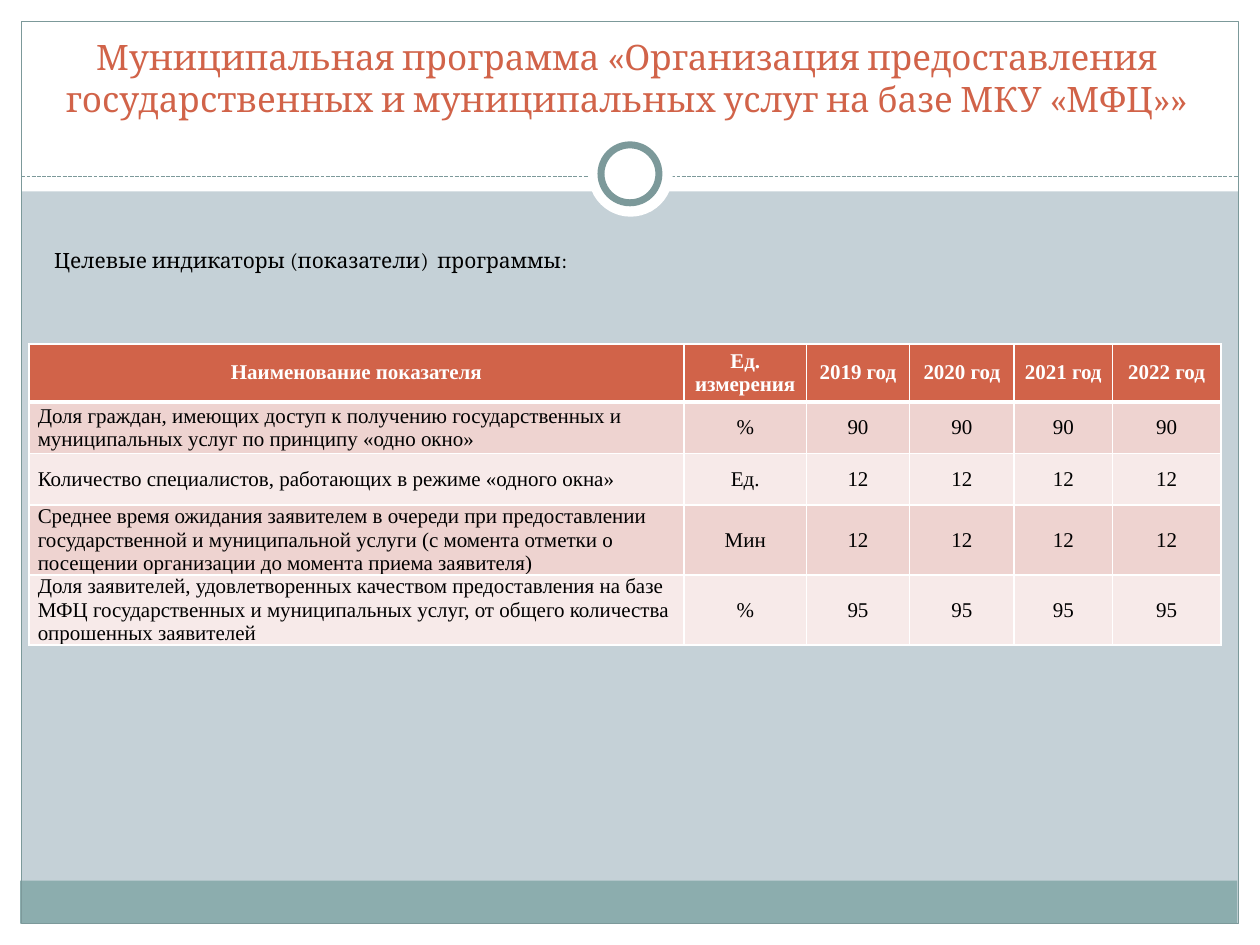
from lxml.etree import SubElement
from pptx import Presentation
from pptx.dml.color import RGBColor
from pptx.enum.dml import MSO_LINE
from pptx.enum.shapes import MSO_CONNECTOR, MSO_SHAPE
from pptx.enum.text import MSO_ANCHOR, MSO_AUTO_SIZE, PP_ALIGN
from pptx.oxml.ns import qn
from pptx.util import Inches, Pt

COLORS = {
    "background": "C5D1D7", "white": "FFFFFF", "black": "000000", "accent": "D16349",
    "footer": "8CADAE", "frame": "7C999A", "odd_row": "EED3D0", "even_row": "F7EAE9",
}
TITLE = ("Муниципальная программа «Организация предоставления государственных "
         "и муниципальных услуг на базе МКУ «МФЦ»»")
SUBTITLE = "Целевые индикаторы (показатели)  программы:"
HEADERS = ["Наименование показателя", "Ед. измерения"] + [f"{year} год" for year in range(2019, 2023)]
INDICATORS = [
    ("Доля граждан, имеющих доступ к получению государственных и муниципальных услуг "
     "по принципу «одно окно»", "%", [90, 90, 90, 90]),
    ("Количество специалистов, работающих в режиме «одного окна»", "Ед.", [12, 12, 12, 12]),
    ("Среднее время ожидания заявителем в очереди при предоставлении государственной и "
     "муниципальной услуги (с момента отметки о посещении организации до момента приема заявителя)",
     "Мин", [12, 12, 12, 12]),
    ("Доля заявителей, удовлетворенных качеством предоставления на базе МФЦ государственных и "
     "муниципальных услуг, от общего количества опрошенных заявителей", "%", [95, 95, 95, 95]),
]
COLUMN_WIDTHS = [5.2, 0.97, 0.82, 0.83, 0.78, 0.86]
ROW_HEIGHTS = [0.46] + [0.41] * len(INDICATORS)
PANELS = [
    (0, 7.33, 10, 0.17, "white"),
    (0, 0, 10, 1.52, "white"),
    (0, 0, 0.17, 7.5, "white"),
    (9.83, 0, 0.17, 7.5, "white"),
    (0.16, 6.99, 9.66, 0.34, "footer"),
]


def color(name):
    return RGBColor.from_string(COLORS[name])


def add_panel(slide, kind, box, fill=None, line_width=None):
    shape = slide.shapes.add_shape(kind, *map(Inches, box))
    shape.shadow.inherit = False
    if fill:
        shape.fill.solid()
        shape.fill.fore_color.rgb = color(fill)
    else:
        shape.fill.background()
    if line_width:
        shape.line.color.rgb = color("frame")
        shape.line.width = Pt(line_width)
    else:
        shape.line.fill.background()


def add_divider(slide, left, right, top):
    divider = slide.shapes.add_connector(
        MSO_CONNECTOR.STRAIGHT, Inches(left), Inches(top), Inches(right), Inches(top))
    divider.line.color.rgb = color("frame")
    divider.line.width = Pt(0.75)
    divider.line.dash_style = MSO_LINE.SQUARE_DOT
    SubElement(divider.element.spPr, qn("a:effectLst"))


def style_text(paragraph, font, size, color_name, alignment, bold=False):
    paragraph.alignment = alignment
    for run in paragraph.runs:
        run.font.name = font
        run.font.size = Pt(size)
        run.font.bold = bold
        run.font.color.rgb = color(color_name)


def fill_placeholder(shape, box, text, size, color_name, alignment, anchor):
    shape.left, shape.top, shape.width, shape.height = map(Inches, box)
    frame = shape.text_frame
    frame.text = text
    frame.word_wrap = True
    frame.auto_size = MSO_AUTO_SIZE.NONE
    frame.vertical_anchor = anchor
    paragraph = frame.paragraphs[0]
    paragraph.space_before = Pt(0)
    style_text(paragraph, "Cambria", size, color_name, alignment)
    shape.element.getparent().append(shape.element)
    return paragraph


def set_borders(cell, bottom_width):
    properties = cell._tc.get_or_add_tcPr()
    widths = {"a:lnL": 1, "a:lnR": 1, "a:lnT": 1, "a:lnB": bottom_width}
    for position, (side, width) in enumerate(widths.items()):
        line = SubElement(properties, qn(side), w=str(Pt(width)))
        fill = SubElement(line, qn("a:solidFill"))
        SubElement(fill, qn("a:srgbClr"), val=COLORS["white"])
        properties.insert(position, line)


def add_indicator_table(slide):
    rows = [HEADERS] + [[name, unit, *values] for name, unit, values in INDICATORS]
    table = slide.shapes.add_table(
        len(rows), len(HEADERS), Inches(0.23), Inches(2.73),
        Inches(sum(COLUMN_WIDTHS)), Inches(sum(ROW_HEIGHTS))).table
    for column, width in zip(table.columns, COLUMN_WIDTHS):
        column.width = Inches(width)
    for row_index, values in enumerate(rows):
        table.rows[row_index].height = Inches(ROW_HEIGHTS[row_index])
        header = row_index == 0
        fill = "accent" if header else "odd_row" if row_index % 2 else "even_row"
        for column_index, value in enumerate(values):
            cell = table.cell(row_index, column_index)
            cell.text = str(value)
            cell.vertical_anchor = MSO_ANCHOR.MIDDLE
            cell.margin_left = cell.margin_right = Inches(0.07)
            cell.margin_top = cell.margin_bottom = 0
            cell.fill.solid()
            cell.fill.fore_color.rgb = color(fill)
            alignment = PP_ALIGN.CENTER if header or column_index else PP_ALIGN.LEFT
            style_text(cell.text_frame.paragraphs[0], "Times New Roman", 12,
                       "white" if header else "black", alignment, header)
            set_borders(cell, 3 if header else 1)


def main():
    presentation = Presentation()
    presentation.slide_width, presentation.slide_height = Inches(10), Inches(7.5)
    slide = presentation.slides.add_slide(presentation.slide_layouts[1])
    slide.background.fill.solid()
    slide.background.fill.fore_color.rgb = color("background")

    for *box, fill in PANELS:
        add_panel(slide, MSO_SHAPE.RECTANGLE, box, fill)
    add_panel(slide, MSO_SHAPE.RECTANGLE, (0.17, 0.17, 9.66, 7.16), line_width=0.75)
    add_divider(slide, 0.17, 9.83, 1.4)
    add_panel(slide, MSO_SHAPE.OVAL, (4.67, 1.05, 0.67, 0.67), "white")
    add_panel(slide, MSO_SHAPE.OVAL, (4.77, 1.15, 0.46, 0.46), "white", 4)

    fill_placeholder(slide.shapes.title, (0.31, 0.47, 9.33, 0.53), TITLE, 20, "accent",
                     PP_ALIGN.CENTER, MSO_ANCHOR.BOTTOM)
    body = slide.placeholders[1]
    paragraph = fill_placeholder(body, (0.33, 1.67, 9.3, 0.67), SUBTITLE, 12, "black",
                                 PP_ALIGN.LEFT, MSO_ANCHOR.MIDDLE)
    body.text_frame.margin_top = Inches(0.17)
    properties = paragraph._p.get_or_add_pPr()
    properties.set("marL", str(Inches(0.3)))
    properties.set("indent", str(Inches(-0.3)))
    SubElement(properties, qn("a:buNone"))
    add_indicator_table(slide)
    presentation.save("out.pptx")


if __name__ == "__main__":
    main()
